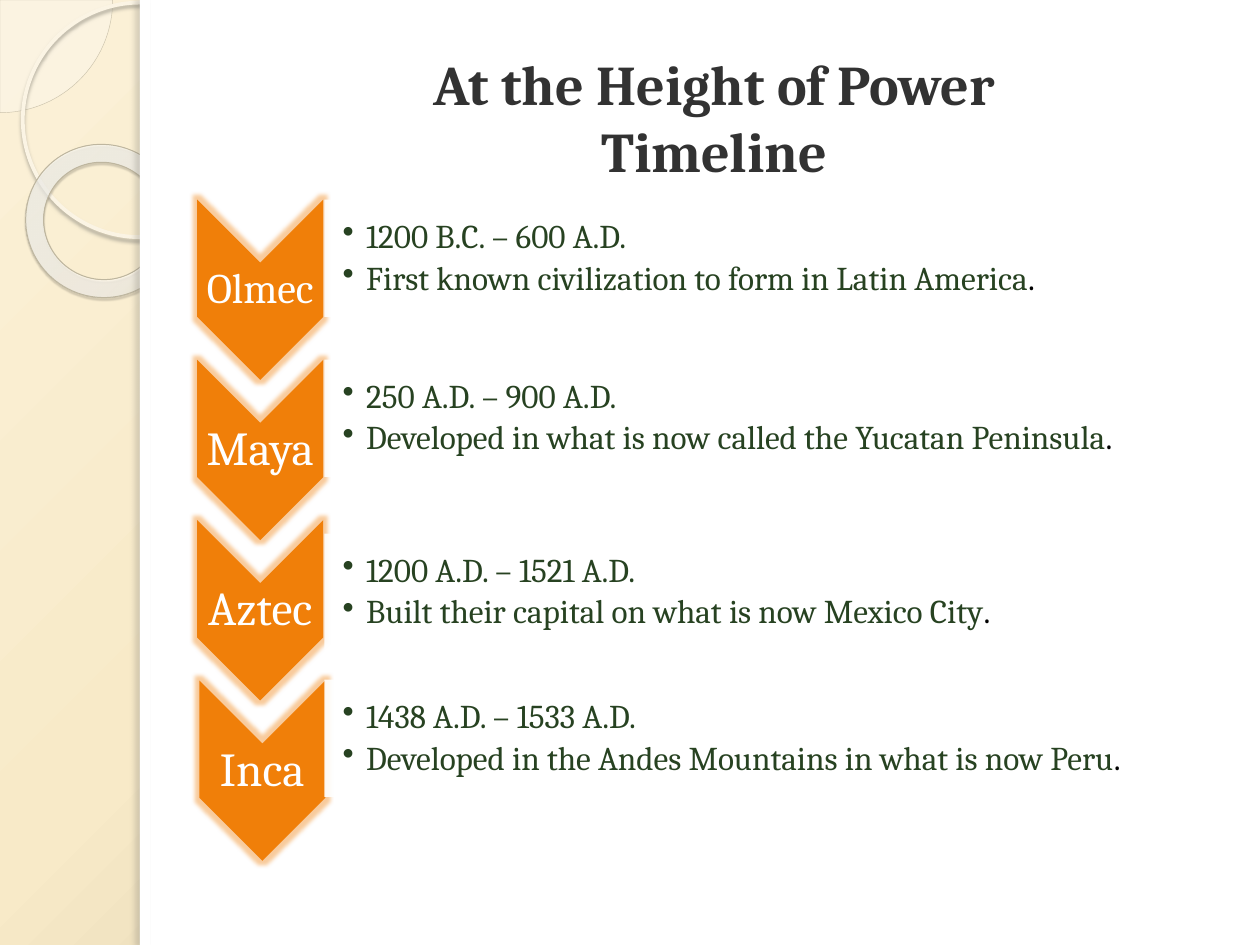
from pptx import Presentation
from pptx.dml.color import RGBColor
from pptx.enum.shapes import MSO_SHAPE
from pptx.enum.text import MSO_ANCHOR, MSO_AUTO_SIZE, PP_ALIGN
from pptx.oxml import parse_xml
from pptx.oxml.ns import nsdecls, qn
from pptx.util import Pt

PIE, OVAL, DONUT = MSO_SHAPE.PIE, MSO_SHAPE.OVAL, MSO_SHAPE.DONUT
RECT, CHEVRON = MSO_SHAPE.RECTANGLE, MSO_SHAPE.CHEVRON
ROUND_TOP = MSO_SHAPE.ROUND_2_SAME_RECTANGLE
MIDDLE, CENTER, NO_FIT = MSO_ANCHOR.MIDDLE, PP_ALIGN.CENTER, MSO_AUTO_SIZE.NONE

THEME = {
    "font": "Cambria", "title": "323232", "accent": "F07F09", "body": "274221",
    "white": "FFFFFF", "stop": "000000",
    "pie": "FCFAF6", "pie_line": "CAC2AB", "ring_line": "FBF4E4", "donut_line": "BEB69F",
    "ring_shadow": "ABA697", "donut_shadow": "575349", "panel_shadow": "716E67",
    "backdrop": [(0, "FBF1D8", 100), (40, "F8EAC8", 100), (100, "BDB193", 100)],
    "donut": [(0, "FDFCF8", 70), (70, "FFFEFB", 55), (100, "DECDA3", 60)],
    "title_size": 32, "name_size": 27, "long_name_size": 24, "body_size": 19,
}


def set_gradient(parent, stops, rect):
    gs = "".join(
        f'<a:gs pos="{pos * 1000}"><a:srgbClr val="{color}">'
        f'<a:alpha val="{alpha * 1000}"/></a:srgbClr></a:gs>'
        for pos, color, alpha in stops)
    l, t, r, b = [v * 1000 for v in rect]
    solid = parent.find(qn("a:solidFill"))
    parent.replace(solid, parse_xml(
        f'<a:gradFill {nsdecls("a")} rotWithShape="1"><a:gsLst>{gs}</a:gsLst>'
        f'<a:path path="circle"><a:fillToRect l="{l}" t="{t}" r="{r}" b="{b}"/>'
        f'</a:path></a:gradFill>'))


def add_shape(kind, box, color=None, alpha=100, line=None, shadow=None, glow=None):
    sp = s.shapes.add_shape(kind, *[Pt(v) for v in box])
    sp.shadow.inherit = False
    if color:
        sp.fill.solid()
        sp.fill.fore_color.rgb = RGBColor.from_string(color)
        clr = sp.element.spPr.find(qn("a:solidFill"))[0]
        clr.append(parse_xml(f'<a:alpha {nsdecls("a")} val="{alpha * 1000}"/>'))
    else:
        sp.fill.background()
    if line:
        sp.line.color.rgb = RGBColor.from_string(line[0])
        sp.line.width = Pt(line[1])
    else:
        sp.line.fill.background()
    effects = sp.element.spPr.find(qn("a:effectLst"))
    if shadow:
        tint, opacity, blur, dist, angle = shadow
        effects.append(parse_xml(
            f'<a:outerShdw {nsdecls("a")} blurRad="{Pt(blur)}" dist="{Pt(dist)}" '
            f'dir="{angle * 60000}" algn="tl" rotWithShape="0"><a:srgbClr val="{tint}">'
            f'<a:alpha val="{opacity * 1000}"/></a:srgbClr></a:outerShdw>'))
    if glow:
        effects.append(parse_xml(
            f'<a:glow {nsdecls("a")} rad="{Pt(5)}"><a:srgbClr val="{glow}">'
            f'<a:alpha val="40000"/></a:srgbClr></a:glow>'))
    return sp


prs = Presentation()
prs.slide_width, prs.slide_height = Pt(720), Pt(540)
s = prs.slides.add_slide(prs.slide_layouts[5])
s.background.fill.solid()
set_gradient(next(s.element.iter(qn("p:bgPr"))), THEME["backdrop"], (-24, -20, 124, 120))

pie = add_shape(PIE, (-64.4, -64.4, 128.8, 128.8), THEME["pie"], 33, (THEME["pie_line"], 0.25))
pie.adjustments[0], pie.adjustments[1] = 0, 54
add_shape(OVAL, (13, 1.5, 134, 134), line=(THEME["ring_line"], 2.15),
          shadow=(THEME["ring_shadow"], 85, 2, 2, 90))
donut = add_shape(DONUT, (14.4, 82.8, 88.5, 87), THEME["white"],
                  line=(THEME["donut_line"], 0.58), shadow=(THEME["donut_shadow"], 35, 1, 1.2, 75))
donut.rotation = 38.6
donut.adjustments[0] = 0.118
set_gradient(donut.element.spPr, THEME["donut"], (-408, -50, 508, 150))
add_shape(RECT, (80, 0, 640, 540), THEME["white"])
add_shape(RECT, (80, 0, 5.8, 540), THEME["white"], shadow=(THEME["panel_shadow"], 25, 3, 3, 180))

title = s.shapes.title
s.shapes.element.append(title.element)
title.left, title.top, title.width, title.height = Pt(113), Pt(21.6), Pt(590.4), Pt(90)
tf = title.text_frame
tf.text = "At the Height of Power\vTimeline"
tf.vertical_anchor, tf.auto_size, tf.word_wrap = MIDDLE, NO_FIT, True
p = tf.paragraphs[0]
p.alignment = CENTER
for r in p.runs:
    r.font.name, r.font.size, r.font.bold = THEME["font"], Pt(THEME["title_size"]), True
    r.font.color.rgb = RGBColor.from_string(THEME["title"])

civilizations = [
    ("Olmec", THEME["long_name_size"], 97.2, 117.4, "1200 B.C. – 600 A.D.",
     "First known civilization to form in Latin America"),
    ("Maya", THEME["name_size"], 97.2, 208.8, "250 A.D. – 900 A.D.",
     "Developed in what is now called the Yucatan Peninsula"),
    ("Aztec", THEME["name_size"], 97.2, 308.2, "1200 A.D. – 1521 A.D.",
     "Built their capital on what is now Mexico City"),
    ("Inca", THEME["name_size"], 98.4, 391.7, "1438 A.D. – 1533 A.D.",
     "Developed in the Andes Mountains in what is now Peru"),
]
for i, (name, size, left, text_top, dates, fact) in enumerate(civilizations):
    top = 129.6 + i * 91.6
    chevron = add_shape(CHEVRON, (left, top, 103, 72), THEME["accent"], glow=THEME["accent"])
    chevron.rotation = 90

    label = s.shapes.add_textbox(Pt(left + 15.5), Pt(top + 20.6), Pt(72), Pt(31))
    tf = label.text_frame
    tf.text = name
    tf.word_wrap, tf.vertical_anchor = True, MIDDLE
    tf.margin_left = tf.margin_right = tf.margin_top = tf.margin_bottom = Pt(1.3)
    p = tf.paragraphs[0]
    p.alignment, p.line_spacing = CENTER, 0.9
    font = p.runs[0].font
    font.name, font.size = THEME["font"], Pt(size)
    font.color.rgb = RGBColor.from_string(THEME["white"])

    panel = add_shape(ROUND_TOP, (411.1, text_top - 229, 67, 518.4), THEME["white"], 90)
    panel.rotation = 90

    notes = s.shapes.add_textbox(Pt(185), Pt(text_top), Pt(514.8), Pt(60.5))
    tf = notes.text_frame
    tf.text = f"{dates}\n{fact}"
    tf.word_wrap, tf.vertical_anchor = True, MIDDLE
    tf.margin_left = Pt(10.8)
    tf.margin_right = tf.margin_top = tf.margin_bottom = Pt(0.9)
    tf.paragraphs[1].add_run().text = "."
    for p in tf.paragraphs:
        p.level, p.line_spacing, p.space_after = 1, 0.9, Pt(3.4)
        pPr = p._p.get_or_add_pPr()
        pPr.set("marL", str(Pt(13.5)))
        pPr.set("indent", str(Pt(-13.5)))
        pPr.append(parse_xml(f'<a:buChar {nsdecls("a")} char="•"/>'))
        for r in p.runs:
            r.font.name, r.font.size = THEME["font"], Pt(THEME["body_size"])
            color = THEME["stop"] if r.text == "." else THEME["body"]
            r.font.color.rgb = RGBColor.from_string(color)

prs.save("out.pptx")
